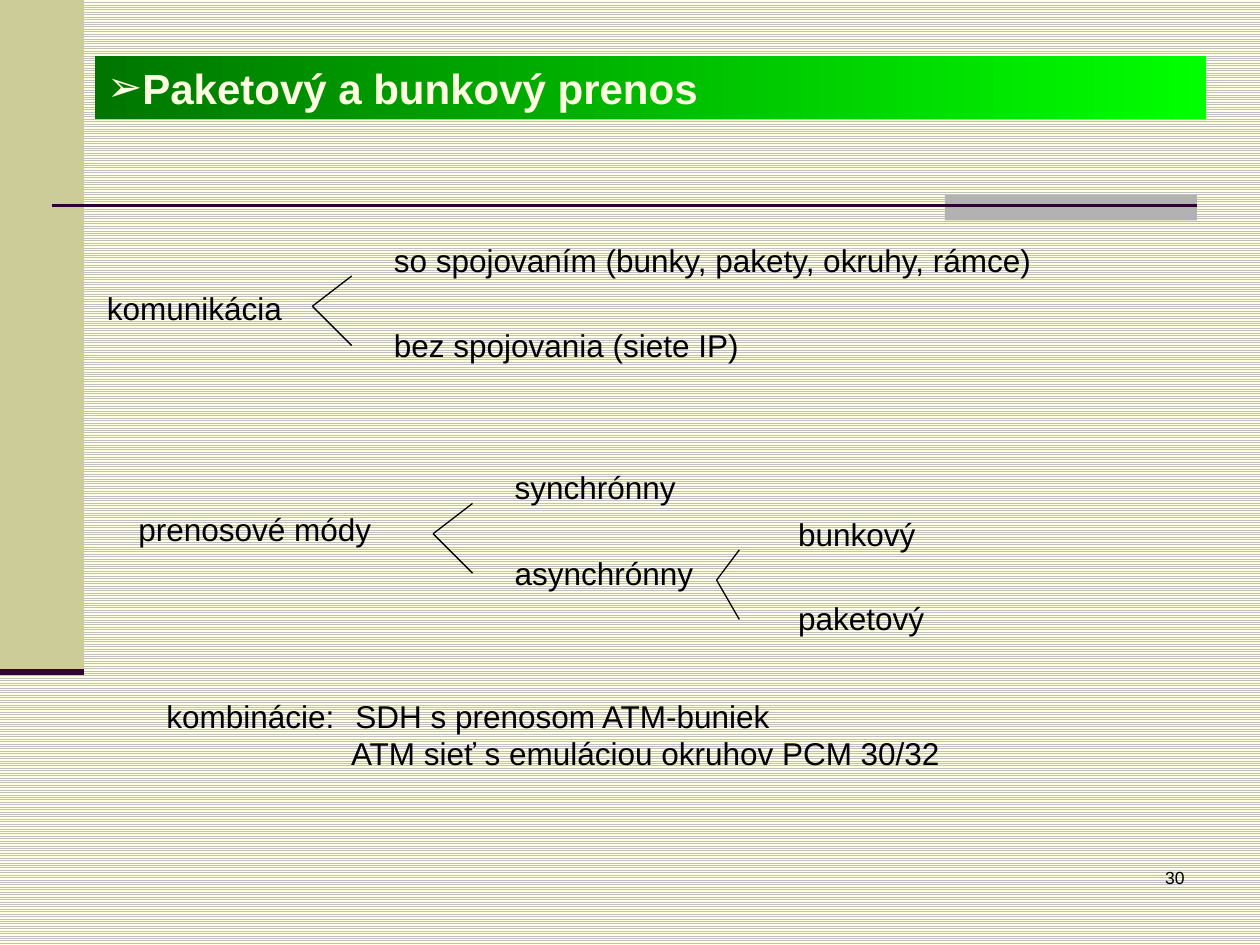
from lxml.etree import SubElement
from pptx import Presentation
from pptx.dml.color import RGBColor
from pptx.enum.dml import MSO_PATTERN
from pptx.enum.shapes import MSO_CONNECTOR, MSO_SHAPE
from pptx.enum.text import MSO_ANCHOR, PP_ALIGN
from pptx.oxml.ns import qn
from pptx.util import Pt

TITLE_ONLY = 5
BLACK, CREAM, PLUM = "000000", "FFFFE1", "330033"


def color(hex_string):
    return RGBColor.from_string(hex_string)


def write(paragraph, text, size=18, fill=BLACK, bold=False, align=PP_ALIGN.LEFT,
          bullet=None, indent=0, tab=None):
    """Fill a paragraph; indent and tab stop are in points."""
    paragraph.alignment = align
    paragraph.space_before = Pt(0)
    run = paragraph.add_run()
    run.text = text
    run.font.name = "Arial"
    run.font.size = Pt(size)
    run.font.bold = bold
    run.font.color.rgb = color(fill)
    properties = paragraph._p.get_or_add_pPr()
    properties.set("marL", str(Pt(indent)))
    properties.set("indent", "0")
    if bullet:
        SubElement(properties, qn("a:buFont"), typeface="Arial")
        SubElement(properties, qn("a:buChar"), char=bullet)
    if tab:
        stops = SubElement(properties, qn("a:tabLst"))
        SubElement(stops, qn("a:tab"), pos=str(Pt(tab)), algn="l")


class SlideBuilder:
    def __init__(self, slide):
        self.slide = slide
        self.shapes = slide.shapes

    def background(self, pattern, fore, back):
        fill = self.slide.background.fill
        fill.patterned()
        fill.pattern = pattern
        fill.fore_color.rgb = color(fore)
        fill.back_color.rgb = color(back)

    def block(self, left, top, width, height, fill):
        shape = self.shapes.add_shape(MSO_SHAPE.RECTANGLE, Pt(left), Pt(top), Pt(width), Pt(height))
        shape.shadow.inherit = False
        shape.fill.solid()
        shape.fill.fore_color.rgb = color(fill)
        shape.line.fill.background()

    def line(self, start, end, stroke=BLACK, width=0.75):
        connector = self.shapes.add_connector(
            MSO_CONNECTOR.STRAIGHT, *(Pt(value) for value in (*start, *end)))
        connector.line.color.rgb = color(stroke)
        connector.line.width = Pt(width)
        SubElement(connector._element.spPr, qn("a:effectLst"))

    def fork(self, x, y, reach=22.5, rise=17.3, fall=22.5):
        """Draw two branches that open to the right from one tip."""
        for offset in (-rise, fall):
            self.line((x, y), (x + reach, y + offset))

    def title(self, text, left, top, width, height, gradient):
        shape = self.shapes.title
        shape.left, shape.top, shape.width, shape.height = map(Pt, (left, top, width, height))
        shape.fill.gradient()
        shape.fill.gradient_angle = 0
        for stop, hex_string in zip(shape.fill.gradient_stops, gradient):
            stop.color.rgb = color(hex_string)
        frame = shape.text_frame
        frame.vertical_anchor = MSO_ANCHOR.MIDDLE
        write(frame.paragraphs[0], text, size=24, fill=CREAM, bold=True, bullet="➢")

    def text(self, left, top, width, height, *lines, **style):
        """Add a text box; each line is a (text, paragraph format) pair."""
        box = self.shapes.add_textbox(Pt(left), Pt(top), Pt(width), Pt(height))
        frame = box.text_frame
        frame.word_wrap = True
        for index, (content, line_style) in enumerate(lines):
            paragraph = frame.add_paragraph() if index else frame.paragraphs[0]
            write(paragraph, content, **style, **line_style)


def main():
    presentation = Presentation()
    presentation.slide_width, presentation.slide_height = Pt(720), Pt(540)
    slide = presentation.slides.add_slide(presentation.slide_layouts[TITLE_ONLY])
    builder = SlideBuilder(slide)

    builder.background(MSO_PATTERN.LIGHT_HORIZONTAL, "C0C0C0", CREAM)
    builder.block(0, 0, 48, 384, "CCCC99")
    builder.block(540, 111.5, 144, 14.5, "B2B2B2")
    builder.line((30, 117.5), (684, 117.5), PLUM, 1.5)
    builder.line((0, 384), (48, 384), PLUM, 3.5)
    builder.title("Paketový a bunkový prenos", 54, 32, 635, 36, ("007600", "00FF00"))

    builder.fork(178.5, 175)
    builder.fork(247.5, 305)
    builder.fork(409.5, 331.5, reach=13)

    labels = [
        ("komunikácia", 54, 161.5, 125),
        ("so spojovaním (bunky, pakety, okruhy, rámce)", 218, 134, 397),
        ("bez spojovania (siete IP)", 218, 183, 221),
        ("prenosové módy", 72, 288, 163),
        ("synchrónny", 287, 264, 221),
        ("asynchrónny", 287, 313, 221),
        ("bunkový", 449, 290.5, 126),
        ("paketový", 449, 339, 126),
    ]
    for label, left, top, width in labels:
        builder.text(left, top, width, 29, (label, {}))

    builder.text(88, 394.5, 544, 51,
                 ("kombinácie:\tSDH s prenosom ATM-buniek", {"tab": 111}),
                 ("ATM sieť s emuláciou okruhov PCM 30/32", {"indent": 105.5}))
    builder.text(534, 492, 150, 36, ("30", {}), size=10, align=PP_ALIGN.RIGHT)

    presentation.save("out.pptx")


if __name__ == "__main__":
    main()
